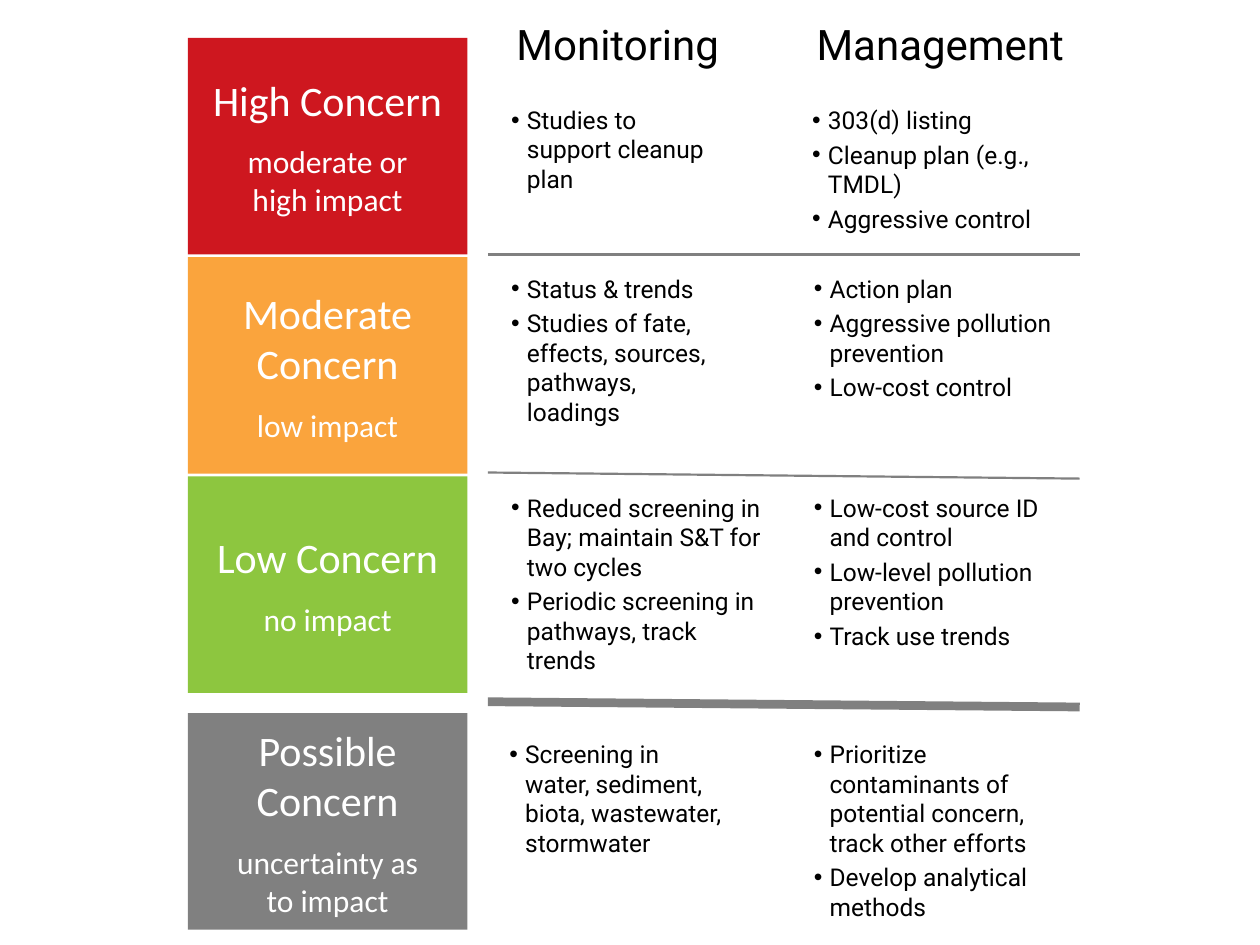
from lxml import etree
from pptx import Presentation
from pptx.dml.color import RGBColor
from pptx.enum.shapes import MSO_CONNECTOR as Link, MSO_SHAPE as Kind
from pptx.enum.text import MSO_ANCHOR as Anchor, MSO_AUTO_SIZE as Fit, PP_ALIGN as Align
from pptx.oxml.ns import qn
from pptx.util import Pt


def color(code):
    return RGBColor.from_string(code)


def write(frame, lines, bullet=False, **form):
    """Fill a text frame with (text, size, space before) lines in one format."""
    frame.word_wrap = True
    for i, (text, size, gap) in enumerate(lines):
        para = frame.paragraphs[0] if i == 0 else frame.add_paragraph()
        para.text = text
        para.alignment = Align.LEFT if bullet else Align.CENTER
        para.space_after = Pt(form["after"])
        if gap:
            para.space_before = Pt(gap)
        if bullet:
            props = para._p.get_or_add_pPr()
            props.set("marL", str(Pt(9)))
            props.set("indent", str(Pt(-9)))
            etree.SubElement(props, qn("a:buFont")).set("typeface", "Arial")
            etree.SubElement(props, qn("a:buChar")).set("char", "•")
        font = para.runs[0].font
        for key, value in {"name": form["face"], "size": Pt(size)}.items():
            setattr(font, key, value)
        font.color.rgb = color(form["ink"])


deck = Presentation()
deck.slide_width, deck.slide_height = Pt(720), Pt(540)
slide = deck.slides.add_slide(deck.slide_layouts[6])
shapes = slide.shapes
body = {"face": "Roboto", "ink": "000000", "after": 3}
label = {"face": "Calibri", "ink": "FFFFFF", "after": 0}

# Row dividers: start height, end height, weight
for start, end, weight in [(401, 404, 5), (145.5, 145.5, 1.25), (270, 273.5, 1.25)]:
    line = shapes.add_connector(Link.STRAIGHT, Pt(278.8), Pt(start), Pt(617), Pt(end))
    line.line.color.rgb = color("808080")
    line.line.width = Pt(weight)
    etree.SubElement(line._element.spPr, qn("a:effectLst"))

# Column headings
for text, left, width in [("Monitoring", 273, 160), ("Management", 443, 188.6)]:
    box = shapes.add_textbox(Pt(left), Pt(7.2), Pt(width), Pt(36))
    write(box.text_frame, [(text, 24, 0)], **body)
    box.text_frame.auto_size = Fit.SHAPE_TO_FIT_TEXT

# Rows: fill, block top, level, impact, text top, then (left, width, height, bullets) per column
rows = [
    ("CE171F", 21.6, "High Concern", ["moderate or", "high impact"], 56.5, [
        (285, 134.6, 58, ["Studies to support cleanup plan"]),
        (457, 167, 81, ["303(d) listing", "Cleanup plan (e.g., TMDL)", "Aggressive control"])]),
    ("FAA43D", 146.9, "Moderate Concern", ["low impact"], 152.8, [
        (285, 142.5, 95, ["Status & trends",
                          "Studies of fate, effects, sources, pathways, loadings"]),
        (458, 150.5, 98, ["Action plan", "Aggressive pollution prevention",
                          "Low-cost control"])]),
    ("8DC63F", 272.2, "Low Concern", ["no impact"], 278, [
        (285, 157.7, 112, ["Reduced screening in Bay; maintain S&T for two cycles",
                           "Periodic screening in pathways, track trends"]),
        (458, 158.4, 98, ["Low-cost source ID and control",
                          "Low-level pollution prevention", "Track use trends"])]),
    ("808080", 407.5, "Possible Concern", ["uncertainty as", "to impact"], 419, [
        (284, 136, 75, ["Screening in water, sediment, biota, wastewater, stormwater"]),
        (458, 151.2, 112, ["Prioritize contaminants of potential concern, track other efforts",
                           "Develop analytical methods"])]),
]
for fill, top, level, impact, head, cells in rows:
    for left, width, height, items in cells:
        box = shapes.add_textbox(Pt(left), Pt(head), Pt(width), Pt(height))
        write(box.text_frame, [(item, 14, 0) for item in items], bullet=True, **body)
        box.text_frame.auto_size = Fit.SHAPE_TO_FIT_TEXT

    block = shapes.add_shape(Kind.RECTANGLE, Pt(107.3), Pt(top), Pt(159.8), Pt(123.8))
    block.shadow.inherit = False
    block.fill.solid()
    block.fill.fore_color.rgb = color(fill)
    block.line.fill.background()
    block.text_frame.vertical_anchor = Anchor.MIDDLE
    notes = [(text, 18, 0 if i else 10) for i, text in enumerate(impact)]
    write(block.text_frame, [(level, 24, 0)] + notes, **label)

deck.save("out.pptx")
